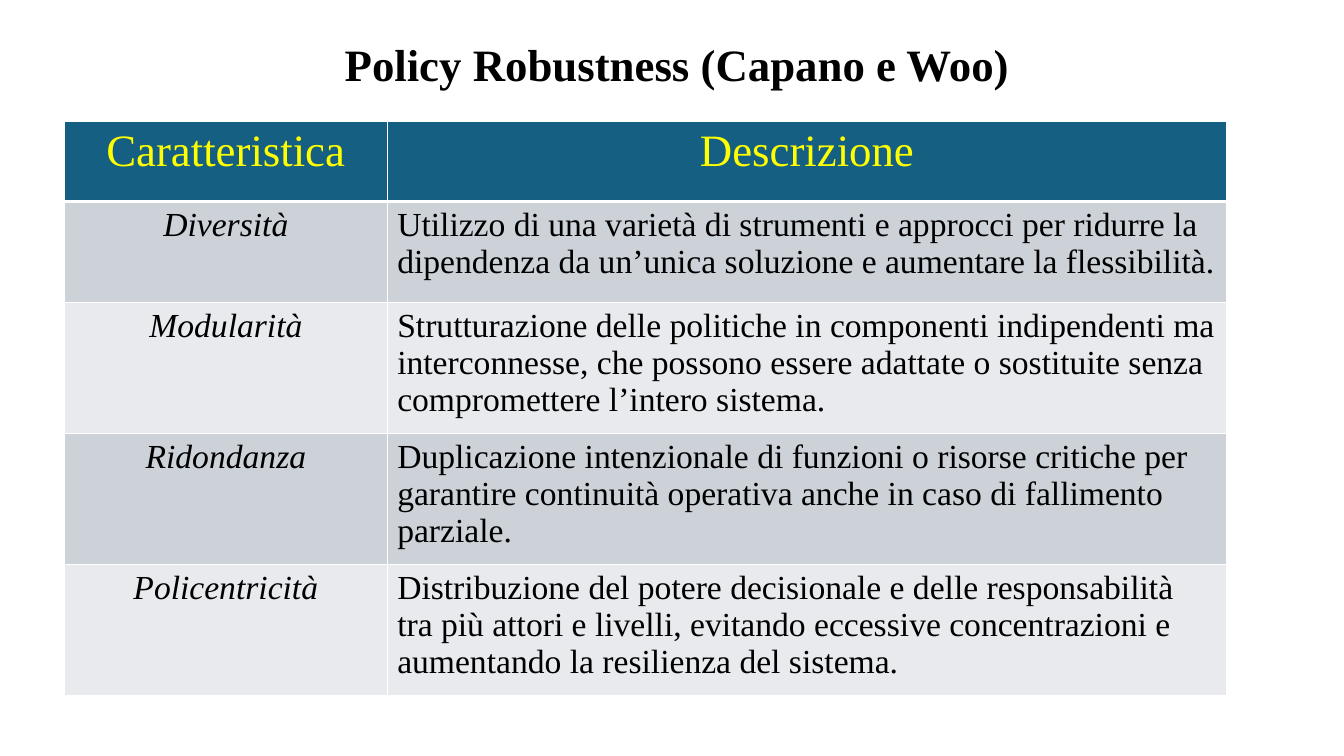
"""Build the slide on policy robustness: a title above a two-column table."""
from dataclasses import dataclass

from lxml import etree
from pptx import Presentation, util as u
from pptx.dml.color import RGBColor
from pptx.enum import text
from pptx.oxml import ns


@dataclass(frozen=True)
class Theme:
    """Colours, font and type sizes of the slide."""
    font: str = "Times New Roman"
    heading_size: int = 32
    body_size: int = 24
    ink: str = "000000"
    header_ink: str = "FFFF00"
    header_fill: str = "156082"
    bands: tuple = ("CCD2D8", "E8EAED")
    border: str = "FFFFFF"
    border_width: int = 1
    header_rule: int = 3


class SlideBuilder:
    """Place styled elements on one slide, with lengths as shares of its size."""

    def __init__(self, presentation, theme):
        """Add a blank slide and keep its theme."""
        self.width = presentation.slide_width
        self.height = presentation.slide_height
        self.theme = theme
        self.slide = presentation.slides.add_slide(presentation.slide_layouts[6])

    def box(self, left, top, width, height):
        """Turn shares of the slide into lengths."""
        return (int(left * self.width), int(top * self.height),
                int(width * self.width), int(height * self.height))

    def set_text(self, text_frame, words, size, color, centered=True, bold=False, italic=False):
        """Fill a text frame with one styled paragraph."""
        text_frame.text = words
        paragraph = text_frame.paragraphs[0]
        paragraph.alignment = text.PP_ALIGN.CENTER if centered else text.PP_ALIGN.LEFT
        font = paragraph.runs[0].font
        font.name, font.size = self.theme.font, u.Pt(size)
        font.bold, font.italic = bold, italic
        font.color.rgb = RGBColor.from_string(color)
        return paragraph

    def title(self, words, *area):
        """Add the bold slide title."""
        text_frame = self.slide.shapes.add_textbox(*self.box(*area)).text_frame
        text_frame.word_wrap = True
        text_frame.vertical_anchor = text.MSO_ANCHOR.MIDDLE
        text_frame.margin_top = text_frame.margin_bottom = 0
        paragraph = self.set_text(text_frame, words, self.theme.heading_size, self.theme.ink, bold=True)
        paragraph.line_spacing = 0.9

    def borders(self, cell, bottom_width):
        """Draw the four borders of a cell."""
        properties = cell._tc.get_or_add_tcPr()
        for position, side in enumerate("LRTB"):
            width = bottom_width if side == "B" else self.theme.border_width
            line = etree.Element(ns.qn(f"a:ln{side}"), w=str(u.Pt(width)))
            fill = etree.SubElement(line, ns.qn("a:solidFill"))
            etree.SubElement(fill, ns.qn("a:srgbClr"), val=self.theme.border)
            properties.insert(position, line)

    def table(self, rows, column_shares, row_shares, *area):
        """Add a table with a header row and banded body rows."""
        theme = self.theme
        frame = self.slide.shapes.add_table(len(rows), len(column_shares), *self.box(*area))
        table = frame.table
        for column, share in zip(table.columns, column_shares):
            column.width = int(share * self.width)
        for row, share in zip(table.rows, row_shares):
            row.height = int(share * self.height)
        frame.height = self.box(*area)[3]
        for row_index, row in enumerate(rows):
            header = row_index == 0
            fill = theme.header_fill if header else theme.bands[(row_index - 1) % 2]
            size = theme.heading_size if header else theme.body_size
            color = theme.header_ink if header else theme.ink
            for column_index, words in enumerate(row):
                cell = table.cell(row_index, column_index)
                first = column_index == 0
                self.set_text(cell.text_frame, words, size, color,
                              centered=header or first, italic=first and not header)
                cell.fill.solid()
                cell.fill.fore_color.rgb = RGBColor.from_string(fill)
                self.borders(cell, theme.header_rule if header else theme.border_width)


FEATURES = [
    ("Caratteristica", "Descrizione"),
    ("Diversità", "Utilizzo di una varietà di strumenti e approcci per ridurre la "
                  "dipendenza da un’unica soluzione e aumentare la flessibilità."),
    ("Modularità", "Strutturazione delle politiche in componenti indipendenti ma interconnesse, "
                   "che possono essere adattate o sostituite senza compromettere l’intero sistema."),
    ("Ridondanza", "Duplicazione intenzionale di funzioni o risorse critiche per garantire "
                   "continuità operativa anche in caso di fallimento parziale."),
    ("Policentricità", "Distribuzione del potere decisionale e delle responsabilità tra più attori e "
                       "livelli, evitando eccessive concentrazioni e aumentando la resilienza del sistema."),
]


def main():
    """Create and save the presentation."""
    presentation = Presentation()
    width, height = 13.33, 7.5
    presentation.slide_width, presentation.slide_height = u.Inches(width), u.Inches(height)
    builder = SlideBuilder(presentation, Theme())
    builder.title("Policy Robustness (Capano e Woo)",
                  1.02 / width, 0.4 / height, 11.39 / width, 0.53 / height)
    builder.table(FEATURES,
                  [inches / width for inches in (3.2, 8.33)],
                  [inches / height for inches in (0.8, 1, 1, 1.16, 1)],
                  0.64 / width, 1.2 / height, 11.53 / width, 5.7 / height)
    presentation.save("out.pptx")


if __name__ == "__main__":
    main()
